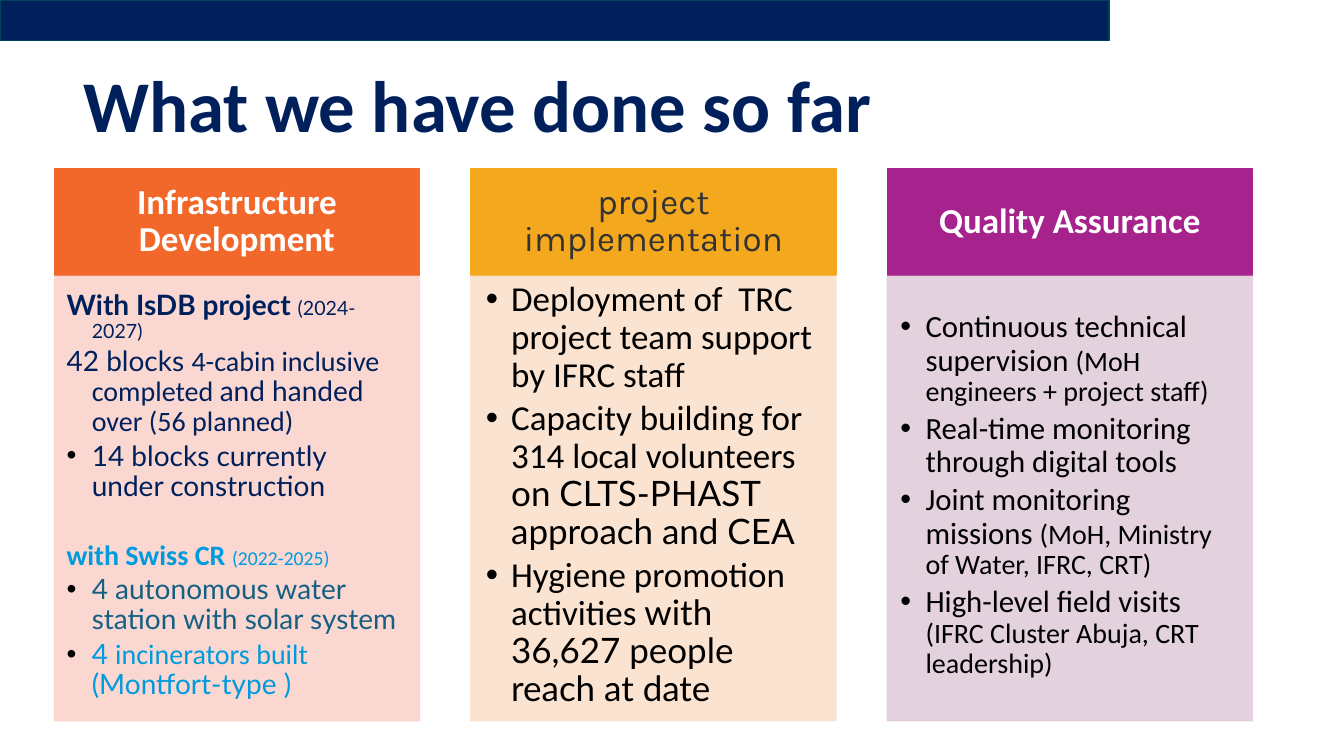
from dataclasses import dataclass
from lxml.etree import SubElement
from pptx import Presentation
from pptx.dml.color import RGBColor
from pptx.enum.shapes import MSO_SHAPE
from pptx.enum.text import MSO_ANCHOR, PP_ALIGN
from pptx.oxml.ns import qn
from pptx.util import Inches, Pt

NAVY = RGBColor(0x00, 0x20, 0x5C)
BAR_FILL = RGBColor(0x00, 0x1F, 0x5B)
BAR_LINE = RGBColor(0x00, 0x43, 0x61)
SKY = RGBColor(0x00, 0x9A, 0xDE)
TEAL = RGBColor(0x15, 0x60, 0x82)
BLACK = RGBColor(0x00, 0x00, 0x00)
WHITE = RGBColor(0xFF, 0xFF, 0xFF)
CHARCOAL = RGBColor(0x33, 0x33, 0x33)
ORANGE = RGBColor(0xF2, 0x68, 0x2A)
PEACH = RGBColor(0xFA, 0xD4, 0xCD)
AMBER = RGBColor(0xF4, 0xA8, 0x1D)
CREAM = RGBColor(0xFB, 0xE1, 0xCD)
PURPLE = RGBColor(0xA6, 0x22, 0x8C)
LILAC = RGBColor(0xE1, 0xCD, 0xDA)


@dataclass
class Span:
    text: str
    size: int = 20
    font: str = "Calibri"
    color: RGBColor = BLACK
    bold: bool = False


@dataclass
class Item:
    spans: list
    bullet: bool = True
    before: float = 0


@dataclass
class Column:
    heading: Span
    strong: RGBColor
    pale: RGBColor
    insets: tuple
    after: float
    items: list


INFRASTRUCTURE = [
    Item([Span("With IsDB project ", 20, "Lato", NAVY, True),
          Span("(2024-2027)", 14, "Lato", NAVY)], bullet=False),
    Item([Span("42 blocks ", 20, "Lato", NAVY),
          Span("4-cabin inclusive completed ", color=NAVY),
          Span("and handed ", 20, "Lato", NAVY),
          Span("over (56 planned)", color=NAVY)], bullet=False),
    Item([Span("14 blocks currently under construction", 20, "Lato", NAVY)]),
    Item([Span("with Swiss CR ", color=SKY, bold=True),
          Span("(2022-2025)", 14, color=SKY)], bullet=False, before=24.6),
    Item([Span("4 autonomous water station with solar system", 20, "Lato", TEAL)]),
    Item([Span("4 ", 20, "Lato", SKY),
          Span("incinerators built ", color=SKY),
          Span("(Montfort-type )", 20, "Lato", SKY)]),
]
IMPLEMENTATION = [
    Item([Span("Deployment of  TRC project team support by IFRC staff", 25)]),
    Item([Span("Capacity building for 314 local volunteers", 25),
          Span(" on CLTS-PHAST approach and CEA", 25, "Lato")]),
    Item([Span("Hygiene promotion activities ", 25),
          Span("with 36,627 people reach at date", 25, "Lato")]),
]
QUALITY = [
    Item([Span("Continuous technical supervision ", 22),
          Span("(MoH engineers + project staff)")]),
    Item([Span("Real-time monitoring through digital tools", 22)]),
    Item([Span("Joint monitoring missions ", 22),
          Span("(MoH, Ministry of Water, IFRC, CRT)")]),
    Item([Span("High-level field visits ", 22),
          Span("(IFRC Cluster Abuja, CRT leadership)")]),
]
COLUMNS = [
    Column(Span("Infrastructure Development", 25, color=WHITE, bold=True),
           ORANGE, PEACH, (0.12, 0.12, 0.16, 0.17), 3, INFRASTRUCTURE),
    Column(Span("project implementation", 25, "Karla", CHARCOAL),
           AMBER, CREAM, (0.15, 0.15, 0.19, 0.22), 4.2, IMPLEMENTATION),
    Column(Span("Quality Assurance", 25, color=WHITE, bold=True),
           PURPLE, LILAC, (0.13, 0.13, 0.17, 0.19), 3.5, QUALITY),
]


def add_spans(para, spans):
    para.line_spacing = 0.9
    for span in spans:
        run = para.add_run()
        run.text = span.text
        run.font.size = Pt(span.size)
        run.font.name = span.font
        run.font.bold = span.bold
        run.font.color.rgb = span.color


def set_insets(frame, insets):
    left, top, right, bottom = insets
    frame.margin_left = Inches(left)
    frame.margin_top = Inches(top)
    frame.margin_right = Inches(right)
    frame.margin_bottom = Inches(bottom)
    frame.vertical_anchor = MSO_ANCHOR.MIDDLE
    frame.word_wrap = True


def set_hanging(para, bullet):
    properties = para._p.get_or_add_pPr()
    properties.set("marL", str(Inches(0.25)))
    properties.set("indent", str(-Inches(0.25)))
    if bullet:
        color = SubElement(properties, qn("a:buClr"))
        SubElement(color, qn("a:srgbClr"), val=str(BLACK))
        SubElement(properties, qn("a:buFont"), typeface="Arial")
        SubElement(properties, qn("a:buChar"), char="•")
    else:
        SubElement(properties, qn("a:buNone"))


def add_rectangle(page, left, top, width, height, fill, line, opacity=100):
    box = page.shapes.add_shape(MSO_SHAPE.RECTANGLE, Inches(left), Inches(top),
                                Inches(width), Inches(height))
    box.shadow.inherit = False
    box.fill.solid()
    box.fill.fore_color.rgb = fill
    box.line.color.rgb = line
    box.line.width = Pt(1)
    if opacity < 100:
        for color in box._element.spPr.iter(qn("a:srgbClr")):
            SubElement(color, qn("a:alpha"), val=str(opacity * 1000))
    return box


def add_title(page, span):
    box = page.shapes.add_textbox(Inches(0.73), Inches(0.64), Inches(11.5), Inches(1.24))
    box.text_frame.word_wrap = True
    add_spans(box.text_frame.paragraphs[0], [span])


def add_heading(page, column, left):
    box = add_rectangle(page, left, 1.67, 3.62, 1.06, column.strong, column.strong)
    set_insets(box.text_frame, (0.19, 0.11, 0.19, 0.11))
    para = box.text_frame.paragraphs[0]
    para.alignment = PP_ALIGN.CENTER
    add_spans(para, [column.heading])


def add_body(page, column, left):
    box = add_rectangle(page, left, 2.74, 3.62, 4.41, column.pale, column.pale, 90)
    frame = box.text_frame
    set_insets(frame, column.insets)
    for index, item in enumerate(column.items):
        para = frame.add_paragraph() if index else frame.paragraphs[0]
        set_hanging(para, item.bullet)
        para.alignment = PP_ALIGN.LEFT
        para.space_after = Pt(column.after)
        if item.before:
            para.space_before = Pt(item.before)
        add_spans(para, item.spans)


def main():
    deck = Presentation()
    deck.slide_width = Inches(13.33)
    deck.slide_height = Inches(7.5)
    page = deck.slides.add_slide(deck.slide_layouts[6])
    add_rectangle(page, 0, 0, 11, 0.4, BAR_FILL, BAR_LINE)
    add_title(page, Span("What we have done so far", 52, color=NAVY, bold=True))
    for index, column in enumerate(COLUMNS):
        left = 0.54 + 4.13 * index
        add_heading(page, column, left)
        add_body(page, column, left)
    deck.save("out.pptx")


if __name__ == "__main__":
    main()
